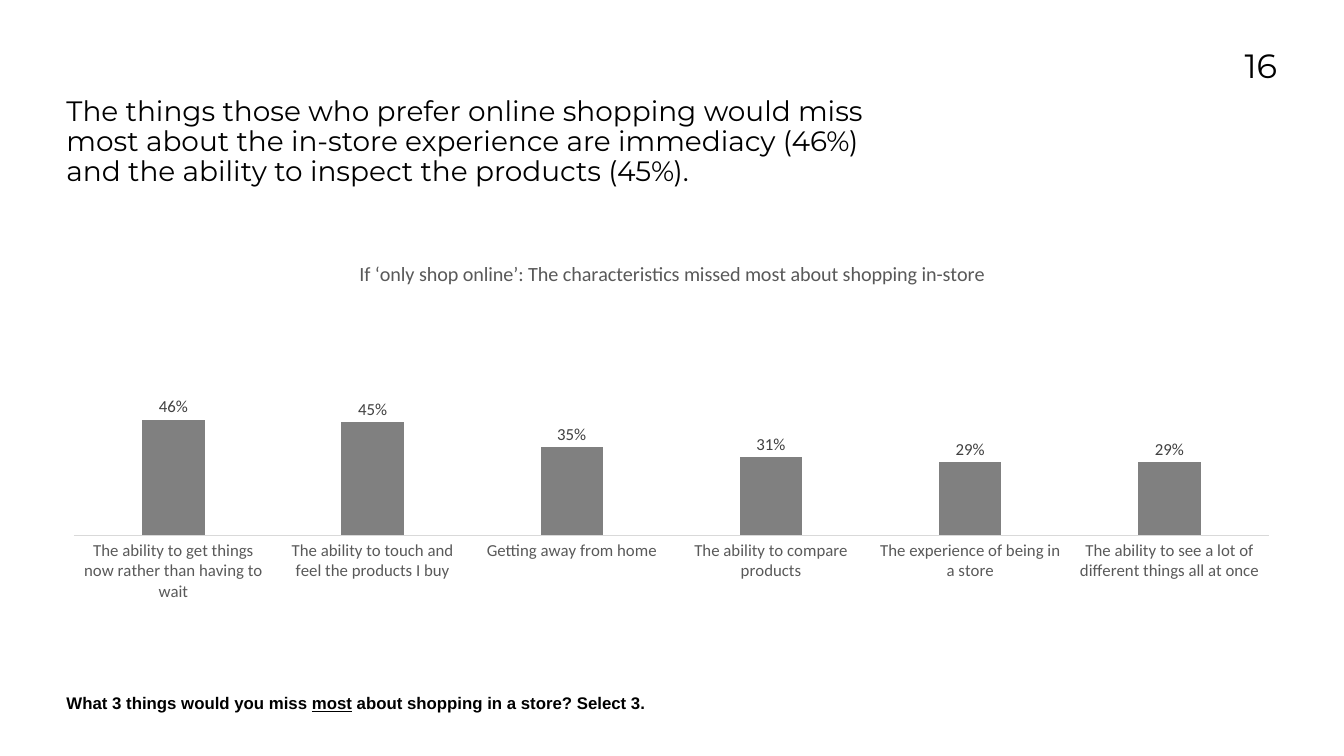
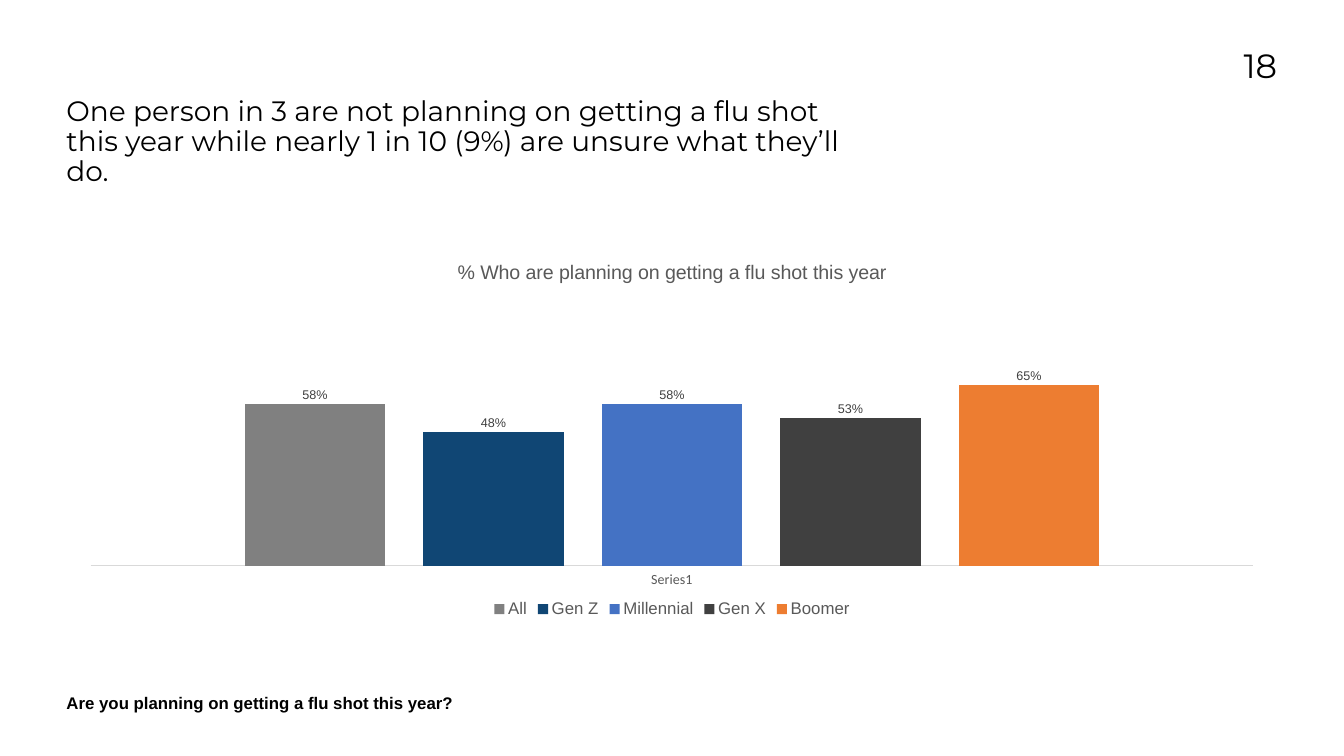
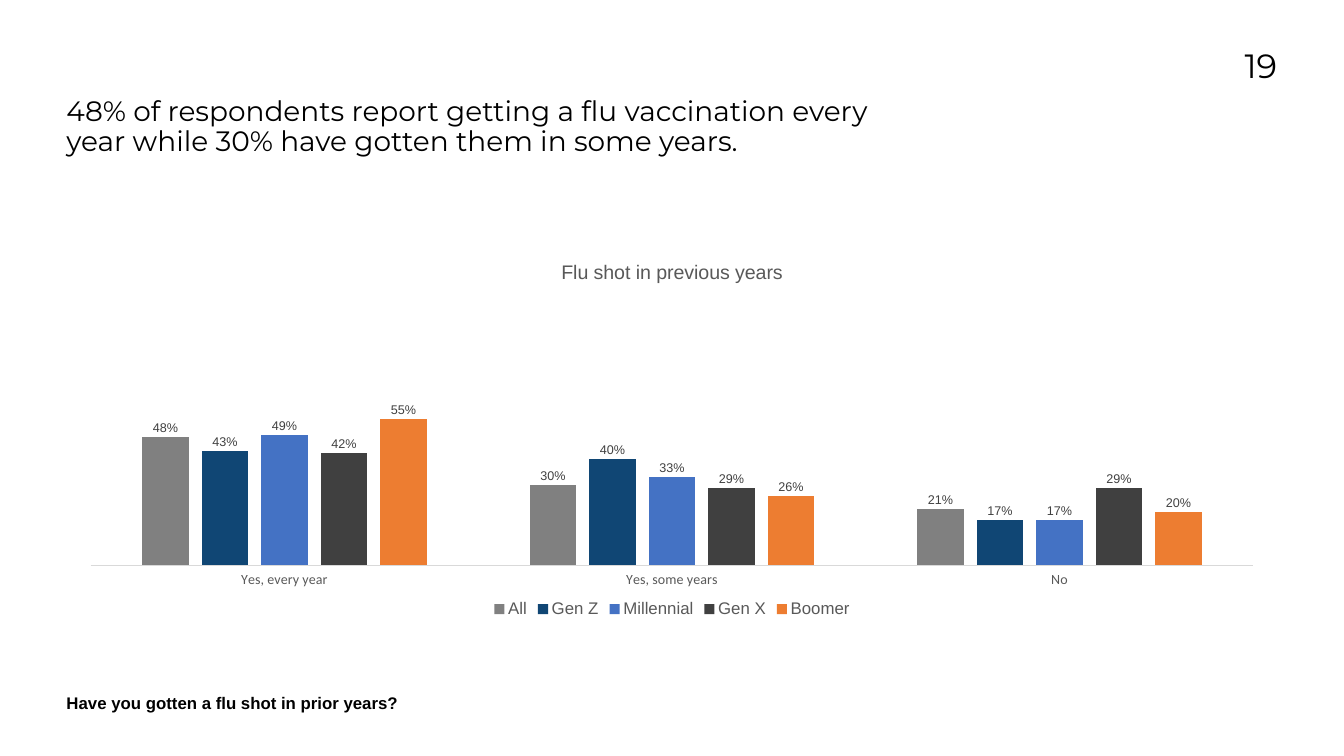
from lxml.etree import SubElement
from pptx import Presentation
from pptx.chart.data import CategoryChartData
from pptx.dml.color import RGBColor
from pptx.enum.chart import (XL_CHART_TYPE, XL_LABEL_POSITION,
                             XL_LEGEND_POSITION, XL_TICK_LABEL_POSITION,
                             XL_TICK_MARK)
from pptx.enum.text import PP_ALIGN
from pptx.oxml.ns import qn
from pptx.util import Pt

BLACK = RGBColor(0x00, 0x00, 0x00)
GREY = RGBColor(0x80, 0x80, 0x80)
NAVY = RGBColor(0x10, 0x46, 0x74)
BLUE = RGBColor(0x44, 0x72, 0xC4)
DARK = RGBColor(0x40, 0x40, 0x40)
ORANGE = RGBColor(0xED, 0x7D, 0x31)
SOFT = RGBColor(0x59, 0x59, 0x59)
RULE = RGBColor(0xD9, 0xD9, 0xD9)

HEAD, SANS, BODY = "Montserrat", "Arial", "Calibri"
LEFT = 95
GROUPS = {"All": GREY, "Gen Z": NAVY, "Millennial": BLUE,
          "Gen X": DARK, "Boomer": ORANGE}


def style(font, name, size, color, bold=False):
    """Set the face, size, colour and weight of a font."""
    font.name, font.size, font.bold = name, Pt(size), bold
    font.color.rgb = color


def write(frame, *runs, name=SANS, size=24, color=BLACK, bold=False,
          align=None, lead=None, under=()):
    """Fill a text frame with one paragraph of runs."""
    para = frame.paragraphs[0]
    para.alignment = align
    if lead:
        para.line_spacing = lead
    for part in runs:
        run = para.add_run()
        run.text = part
        style(run.font, name, size, color, bold)
        if part in under:
            run.font.underline = True


def place(plot, *box):
    """Fix the inner plot area as fractions of the chart."""
    for old in plot.findall(qn("c:layout")):
        plot.remove(old)
    layout = SubElement(plot, qn("c:layout"))
    plot.insert(0, layout)
    spot = SubElement(layout, qn("c:manualLayout"))
    pairs = [("layoutTarget", "inner"), ("xMode", "edge"), ("yMode", "edge"),
             *zip("xywh", box)]
    for tag, val in pairs:
        SubElement(spot, qn("c:" + tag)).set("val", str(val))


class Deck:
    """Survey deck with one method for each kind of element."""

    def __init__(self):
        """Start an empty wide deck."""
        self.file = Presentation()
        self.file.slide_width, self.file.slide_height = Pt(1920), Pt(1080)
        self.slide = None

    def text(self, box, *runs, **form):
        """Add a text box without margins."""
        frame = self.slide.shapes.add_textbox(*map(Pt, box)).text_frame
        frame.word_wrap = True
        frame.margin_left = frame.margin_right = 0
        frame.margin_top = frame.margin_bottom = 0
        write(frame, *runs, **form)

    def page(self, number):
        """Add a slide with its number at the top right."""
        self.slide = self.file.slides.add_slide(self.file.slide_layouts[6])
        self.text((1662.5, 63.5, 162, 118), str(number), name=HEAD, size=48,
                  align=PP_ALIGN.RIGHT)

    def title(self, words):
        """Add the finding of the slide."""
        self.text((LEFT, 139, 1153, 150), words, name=HEAD, size=40, lead=0.9)

    def note(self, *runs, **form):
        """Add the survey question at the bottom."""
        self.text((LEFT, 975.5, 986, 47), *runs, bold=True, lead=1.5, **form)

    def chart(self, title, cats, rows, plot, face=SANS, size=28, axis=20,
              tag=18, legend=True):
        """Add a column chart of percentages."""
        data = CategoryChartData(number_format="0%")
        data.categories = cats
        for name, (_, vals) in rows.items():
            data.add_series(name, vals)
        box = map(Pt, (LEFT, 351.5, 1730, 537))
        chart = self.slide.shapes.add_chart(
            XL_CHART_TYPE.COLUMN_CLUSTERED, *box, data).chart
        style(chart.font, BODY, axis, BLACK)
        chart.has_title = True
        write(chart.chart_title.text_frame, title, name=face, size=size,
              color=SOFT)
        chart.chart_title.include_in_layout = False
        chart.has_legend = legend
        if legend:
            chart.legend.position = XL_LEGEND_POSITION.BOTTOM
            chart.legend.include_in_layout = False
            style(chart.legend.font, SANS, 24, SOFT)
        self.axes(chart, axis)
        self.bars(chart.plots[0], rows, face, tag)
        place(chart.element.find(".//" + qn("c:plotArea")), *plot)

    def axes(self, chart, size):
        """Show the category axis and hide the value axis."""
        cat, val = chart.category_axis, chart.value_axis
        cat.major_tick_mark = cat.minor_tick_mark = XL_TICK_MARK.NONE
        cat.tick_label_position = XL_TICK_LABEL_POSITION.LOW
        cat.format.line.color.rgb = RULE
        cat.format.line.width = Pt(0.75)
        style(cat.tick_labels.font, BODY, size, SOFT)
        val.visible = val.has_major_gridlines = False
        val.minimum_scale, val.maximum_scale = 0, 1

    def bars(self, plot, rows, face, size):
        """Colour and label the columns."""
        plot.gap_width, plot.overlap = 219, -27
        plot.vary_by_categories = False
        for line, (color, _) in zip(plot.series, rows.values()):
            line.format.fill.solid()
            line.format.fill.fore_color.rgb = color
            line.invert_if_negative = False
            tags = line.data_labels
            tags.show_value = True
            tags.position = XL_LABEL_POSITION.OUTSIDE_END
            tags.number_format, tags.number_format_is_linked = "0%", False
            style(tags.font, face, size, DARK)


def group(*vals):
    """Pair each age group with its colour and values."""
    return {name: (color, row)
            for (name, color), row in zip(GROUPS.items(), vals)}


def main():
    """Build the three slides."""
    deck = Deck()

    deck.page(16)
    deck.chart(
        "If ‘only shop online’: The characteristics missed most about "
        "shopping in-store",
        ["The ability to get things now rather than having to wait",
         "The ability to touch and feel the products I buy",
         "Getting away from home",
         "The ability to compare products",
         "The experience of being in a store",
         "The ability to see a lot of different things all at once"],
        {"Series 1": (GREY, (0.46, 0.45, 0.35, 0.31, 0.29, 0.29))},
        (0.006, 0.1, 0.987, 0.67), face=BODY, size=28.8, axis=24, tag=24,
        legend=False)
    deck.title("The things those who prefer online shopping would miss most "
               "about the in-store experience are immediacy (46%) and the "
               "ability to inspect the products (45%).")
    deck.note("What 3 things would you miss ", "most",
              " about shopping in a store?\u00a0Select 3.", under=("most",))

    deck.page(18)
    deck.chart("% Who are planning on getting a flu shot this year",
               ["Series1"],
               group((0.58,), (0.48,), (0.58,), (0.53,), (0.65,)),
               (0.02, 0.11, 0.96, 0.74))
    deck.title("One person in 3 are not planning on getting a flu shot this "
               "year while nearly 1 in 10 (9%) are unsure what they’ll do.")
    deck.note("Are you planning on getting a flu shot this year?")

    deck.page(19)
    deck.chart("Flu shot in previous years",
               ["Yes, every year", "Yes, some years", "No"],
               group((0.48, 0.3, 0.21), (0.43, 0.4, 0.17),
                     (0.49, 0.33, 0.17), (0.42, 0.29, 0.29),
                     (0.55, 0.26, 0.2)),
               (0.02, 0.14, 0.96, 0.71))
    deck.title("48% of respondents report getting a flu vaccination every "
               "year while 30% have gotten them in some years.")
    deck.note("Have you gotten a flu shot in prior years?")

    deck.file.save("out.pptx")


if __name__ == "__main__":
    main()
